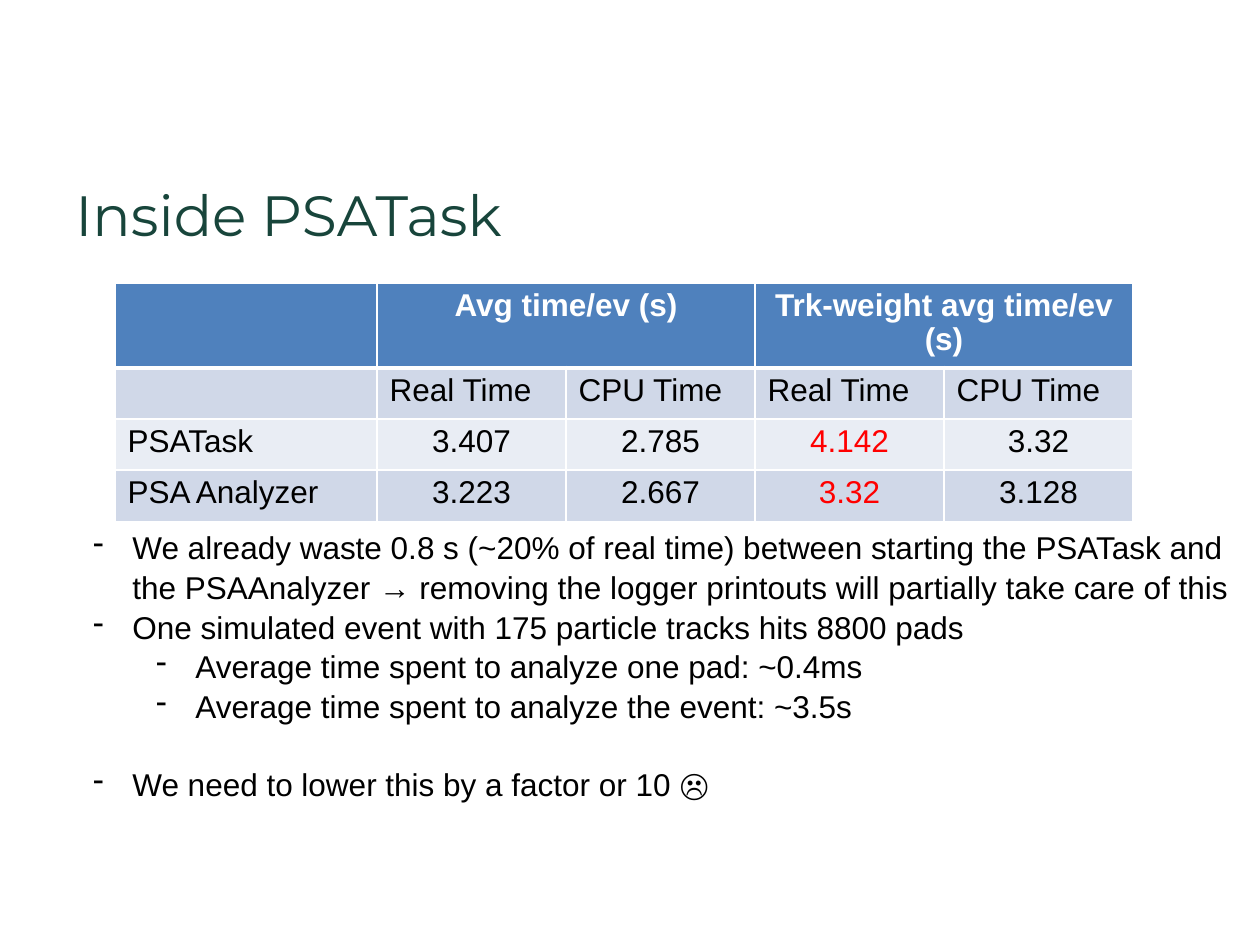
from pptx import Presentation
from pptx import util as u
from pptx.dml.color import RGBColor
from pptx.enum import text
from pptx.oxml import parse_xml
from pptx.oxml.ns import nsdecls

COLORS = {"title": "18453B", "header": "4F81BD", "band": "D0D8E8", "light": "E9EDF4",
          "white": "FFFFFF", "black": "000000", "alert": "FF0000"}

TIMINGS = [
    ["", "Avg time/ev (s)", "", "Trk-weight avg time/ev (s)", ""],
    ["", "Real Time", "CPU Time", "Real Time", "CPU Time"],
    ["PSATask", "3.407", "2.785", "4.142", "3.32"],
    ["PSA Analyzer", "3.223", "2.667", "3.32", "3.128"],
]
FINDINGS = [
    (0, 0, "We already waste 0.8 s (~20% of real time) between starting the PSATask and "
           "the PSAAnalyzer → removing the logger printouts will partially take care of this"),
    (0, 0, "One simulated event with 175 particle tracks hits 8800 pads"),
    (1, 0, "Average time spent to analyze one pad: ~0.4ms"),
    (1, 0, "Average time spent to analyze the event: ~3.5s"),
    (0, 21.7, "We need to lower this by a factor or 10 ☹"),
]


class Deck:
    """Hold the text style and the current slide, and add elements to it."""

    def __init__(self, slide, font="Arial", size=18):
        self.slide, self.font, self.size = slide, font, size

    def style(self, paragraph, color="black", bold=False, font=None, size=None):
        for run in paragraph.runs:
            run.font.name = font or self.font
            run.font.size = u.Pt(size or self.size)
            run.font.bold = bold
            run.font.color.rgb = RGBColor.from_string(COLORS[color])

    def frame(self, left, top, width, height):
        box = self.slide.shapes.add_textbox(u.Cm(left), u.Cm(top), u.Cm(width), u.Cm(height))
        box.text_frame.word_wrap = True
        return box.text_frame

    def title(self, words, *place):
        heading = self.frame(*place)
        heading.text = words
        self.style(heading.paragraphs[0], "title", font="Montserrat", size=32.4)

    def bullets(self, items, *place):
        body = self.frame(*place)
        body.text = "\n".join(words for _, _, words in items)
        for paragraph, (level, gap, _) in zip(body.paragraphs, items):
            paragraph.level = level
            paragraph.line_spacing = 1.05
            paragraph.space_before = u.Pt(gap)
            props = paragraph._p.get_or_add_pPr()
            props.set("marL", str(u.Cm(0.79 + 1.27 * level)))
            props.set("indent", str(u.Cm(-0.79)))
            props.append(parse_xml(f'<a:buChar {nsdecls("a")} char="-"/>'))
            self.style(paragraph)

    def borders(self, cell, top, bottom):
        props = cell._tc.get_or_add_tcPr()
        sides = {"lnL": 1, "lnR": 1, "lnT": top, "lnB": bottom}
        for place, (side, points) in enumerate(sides.items()):
            props.insert(place, parse_xml(
                f'<a:{side} {nsdecls("a")} w="{u.Pt(points)}"><a:solidFill>'
                f'<a:srgbClr val="{COLORS["white"]}"/></a:solidFill></a:{side}>'))

    def table(self, rows, left, top, widths, row_height):
        grid = self.slide.shapes.add_table(
            len(rows), len(widths), u.Cm(left), u.Cm(top),
            u.Cm(sum(widths)), u.Cm(row_height * len(rows))).table
        for column, width in zip(grid.columns, widths):
            column.width = u.Cm(width)
        for r, row in enumerate(rows):
            grid.rows[r].height = u.Cm(row_height)
            fill = "header" if r == 0 else "band" if r % 2 else "light"
            for c, words in enumerate(row):
                cell = grid.cell(r, c)
                cell.text = words
                cell.fill.solid()
                cell.fill.fore_color.rgb = RGBColor.from_string(COLORS[fill])
                self.borders(cell, 3 if r == 1 else 1, 3 if r == 0 else 1)
                paragraph = cell.text_frame.paragraphs[0]
                paragraph.line_spacing = 0.96
                paragraph.font.size = u.Pt(self.size)
                if c and r != 1:
                    paragraph.alignment = text.PP_ALIGN.CENTER
                color = "white" if r == 0 else "alert" if r > 1 and c == 3 else "black"
                self.style(paragraph, color, bold=r == 0)
        for c in (1, 3):
            grid.cell(0, c).merge(grid.cell(0, c + 1))


def main():
    prs = Presentation()
    prs.slide_width, prs.slide_height = u.Cm(25.4), u.Cm(19.05)
    deck = Deck(prs.slides.add_slide(prs.slide_layouts[6]))
    deck.title("Inside PSATask", 1.27, 3.5, 22.86, 1.35)
    deck.table(TIMINGS, 2.32, 5.7, [5.28] + [3.81] * 4, 1.03)
    deck.bullets(FINDINGS, 1.63, 10.49, 23.77, 5.64)
    prs.save("out.pptx")


if __name__ == "__main__":
    main()
